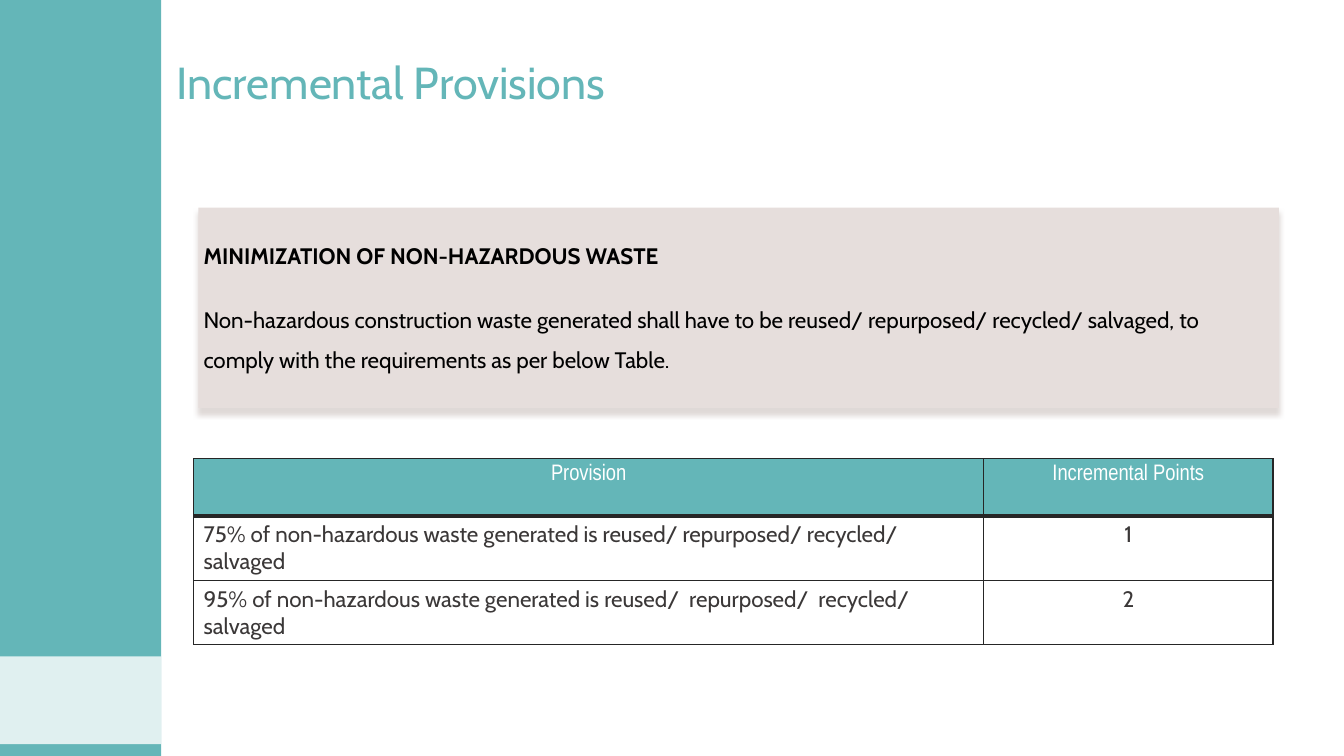
from lxml import etree
from pptx import Presentation
from pptx import util as u
from pptx.dml.color import RGBColor
from pptx.enum import shapes, text
from pptx.oxml import ns

TEAL, WHITE, BLACK = "64B6B8", "FFFFFF", "000000"
SAND, SHADE, EDGE, INK = "E6DEDC", "DFD9D7", "262626", "3B3838"
BODY, HEAD = "Cabin", "Arial Narrow"
LEFT, CENTRE = text.PP_ALIGN.LEFT, text.PP_ALIGN.CENTER
ROWS = [
    ("Provision", "Incremental Points"),
    ("75% of non-hazardous waste generated is reused/ repurposed/ recycled/ salvaged", "1"),
    ("95% of non-hazardous waste generated is reused/  repurposed/  recycled/ salvaged", "2"),
]


def paint(color, value):
    color.rgb = RGBColor.from_string(value)


def fill(item, value):
    item.fill.solid()
    paint(item.fill.fore_color, value)


def node(parent, tag, **attrs):
    """Add a DrawingML child element."""
    child = etree.SubElement(parent, ns.qn(tag))
    for key, value in attrs.items():
        child.set(key, str(value))
    return child


def write(para, words, size, color, font=BODY, bold=False, align=LEFT):
    para.alignment = align
    run = para.add_run()
    run.text = words
    run.font.size = u.Pt(size)
    run.font.name = font
    run.font.bold = bold
    paint(run.font.color, color)


def frame(shape):
    """Set narrow margins, wrapping and middle anchoring."""
    area = shape.text_frame
    area.word_wrap = True
    area.vertical_anchor = text.MSO_ANCHOR.MIDDLE
    area.margin_left = area.margin_right = u.Cm(0.13)
    area.margin_top = area.margin_bottom = u.Cm(0.13)
    return area


def block(slide, left, top, width, height, color):
    shape = slide.shapes.add_shape(
        shapes.MSO_SHAPE.RECTANGLE, u.Cm(left), u.Cm(top), u.Cm(width), u.Cm(height))
    shape.shadow.inherit = False
    fill(shape, color)
    shape.line.fill.background()
    return shape


def fade(shape, percent):
    """Set the opacity of a solid fill."""
    color = shape._element.spPr.find(".//" + ns.qn("a:srgbClr"))
    node(color, "a:alpha", val=percent * 1000)


def cast(shape, color):
    """Drop a soft shadow straight down."""
    effects = shape._element.spPr.find(ns.qn("a:effectLst"))
    drop = node(effects, "a:outerShdw", blurRad=u.Pt(4), dist=u.Pt(4),
                dir=90 * 60000, algn="t", rotWithShape=0)
    node(drop, "a:srgbClr", val=color)


def border(cell, top, bottom):
    props = cell._tc.get_or_add_tcPr()
    for side, width in zip("LRTB", (1, 1, top, bottom)):
        line = node(props, "a:ln" + side, w=u.Pt(width))
        node(node(line, "a:solidFill"), "a:srgbClr", val=EDGE)


def title(slide):
    shape = slide.shapes.title
    shape.left, shape.top = u.Cm(4.32), u.Cm(1.24)
    shape.width, shape.height = u.Cm(16.87), u.Cm(1.63)
    write(frame(shape).paragraphs[0], "Incremental Provisions", 32, TEAL)


def panel(slide):
    shape = block(slide, 5, 5.23, 27.23, 5.05, SAND)
    cast(shape, SHADE)
    area = frame(shape)
    head = area.paragraphs[0]
    write(head, "MINIMIZATION OF NON-HAZARDOUS WASTE", 16, BLACK, bold=True)
    head.space_after = u.Pt(17)
    para = area.add_paragraph()
    para.line_spacing = 1.5
    write(para, "Non-hazardous construction waste generated shall have to be reused/ "
          "repurposed/ recycled/ salvaged, to comply with the requirements as per "
          "below Table.", 16, BLACK)


def grid(slide):
    widths, height = (19.91, 7.29), 1.45
    table = slide.shapes.add_table(
        len(ROWS), len(widths), u.Cm(4.88), u.Cm(11.56),
        u.Cm(sum(widths)), u.Cm(height * len(ROWS))).table
    for col, width in zip(table.columns, widths):
        col.width = u.Cm(width)
    for r, row in enumerate(ROWS):
        table.rows[r].height = u.Cm(height)
        for c, words in enumerate(row):
            cell = table.cell(r, c)
            top = r == 0
            border(cell, 3 if r == 1 else 1, 3 if top else 1)
            fill(cell, TEAL if top else WHITE)
            write(cell.text_frame.paragraphs[0], words, 16,
                  WHITE if top else INK, HEAD if top else BODY,
                  align=CENTRE if top or c else LEFT)


def main():
    deck = Presentation()
    deck.slide_width, deck.slide_height = u.Cm(33.87), u.Cm(19.05)
    slide = deck.slides.add_slide(deck.slide_layouts.get_by_name("Title Only"))
    panel(slide)
    grid(slide)
    block(slide, 0, 0, 4.06, 19.05, TEAL)
    fade(block(slide, 0, 16.54, 4.06, 2.21, WHITE), 80)
    title(slide)
    deck.save("out.pptx")


if __name__ == "__main__":
    main()
